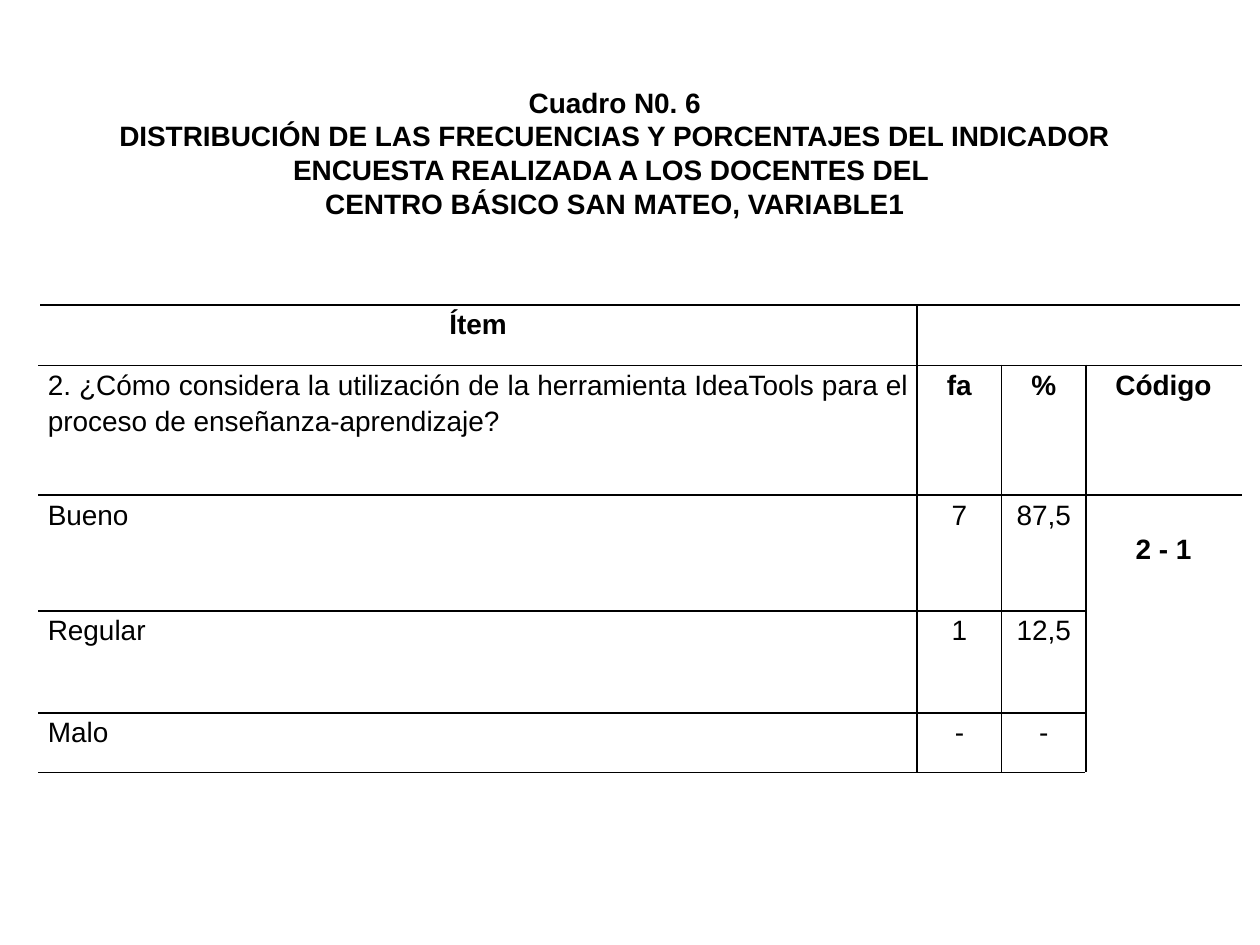
from lxml.etree import SubElement
from pptx import Presentation
from pptx.dml.color import RGBColor
from pptx.enum.text import MSO_ANCHOR, PP_ALIGN
from pptx.oxml.ns import qn
from pptx.util import Inches, Pt


def style(para, align, bold, spacing=None):
    para.alignment = align
    para.line_spacing = spacing
    para.font.name = "Arial"
    para.font.size = Pt(16)
    para.font.bold = bold
    para.font.color.rgb = RGBColor.from_string("000000")


def add_border(cell, side):
    line = SubElement(cell._tc.get_or_add_tcPr(), qn(f"a:ln{side}"), w=str(Pt(1)))
    fill = SubElement(line, qn("a:solidFill"))
    SubElement(fill, qn("a:srgbClr"), val="000000")


deck = Presentation()
deck.slide_width = Inches(10)
deck.slide_height = Inches(7.5)
page = deck.slides.add_slide(deck.slide_layouts[6])

column_widths = [6.97, 0.67, 0.67, 1.23]
row_heights = [0.48, 1.03, 0.92, 0.81, 0.47]
question = (
    "2. ¿Cómo considera la utilización de la herramienta IdeaTools "
    "para el proceso de enseñanza-aprendizaje?"
)
rows = [
    ["Ítem", "", "", ""],
    [question, "fa", "%", "Código"],
    ["Bueno", "7", "87,5", "2 - 1"],
    ["Regular", "1", "12,5", ""],
    ["Malo", "-", "-", ""],
]
bold_texts = {"Ítem", "fa", "%", "Código", "2 - 1"}

frame = page.shapes.add_table(
    5, 4, Inches(0.31), Inches(2.42), Inches(9.53), Inches(3.71)
)
table = frame.table
table.first_row = False
table.horz_banding = False
for column, width in zip(table.columns, column_widths):
    column.width = Inches(width)
for row, height in zip(table.rows, row_heights):
    row.height = Inches(height)
table.cell(0, 1).merge(table.cell(0, 3))
table.cell(2, 3).merge(table.cell(4, 3))

for r, texts in enumerate(rows):
    for c, text in enumerate(texts):
        cell = table.cell(r, c)
        cell.margin_left = cell.margin_right = Inches(0.07)
        cell.margin_top = cell.margin_bottom = 0
        sides = {
            "L": c > 0 and not (r == 0 and c > 1),
            "R": c < 3 and not (r == 0 and c > 0),
            "T": not (c == 3 and r > 2),
            "B": not (c == 3 and r in (2, 3)),
        }
        for side, visible in sides.items():
            if visible:
                add_border(cell, side)
        cell.fill.background()
        if text:
            align = PP_ALIGN.LEFT if c == 0 else PP_ALIGN.CENTER
            if text == question:
                align = PP_ALIGN.JUSTIFY
            elif r == 0:
                align = PP_ALIGN.CENTER
            para = cell.text_frame.paragraphs[0]
            para.text = text
            style(para, align, text in bold_texts, 1.15)
table.cell(2, 3).margin_top = Inches(0.27)

title_lines = [
    "Cuadro N0. 6",
    "DISTRIBUCIÓN DE LAS FRECUENCIAS Y PORCENTAJES DEL INDICADOR",
    "ENCUESTA REALIZADA A LOS DOCENTES DEL ",
    "CENTRO BÁSICO SAN MATEO, VARIABLE1",
]
box = page.shapes.add_textbox(Inches(0.31), Inches(0.62), Inches(9.14), Inches(1.48))
title = box.text_frame
title.word_wrap = True
title.vertical_anchor = MSO_ANCHOR.MIDDLE
title.margin_bottom = Inches(0.35)
title.text = "\n".join(title_lines)
for para in title.paragraphs:
    style(para, PP_ALIGN.CENTER, True)

deck.save("out.pptx")
